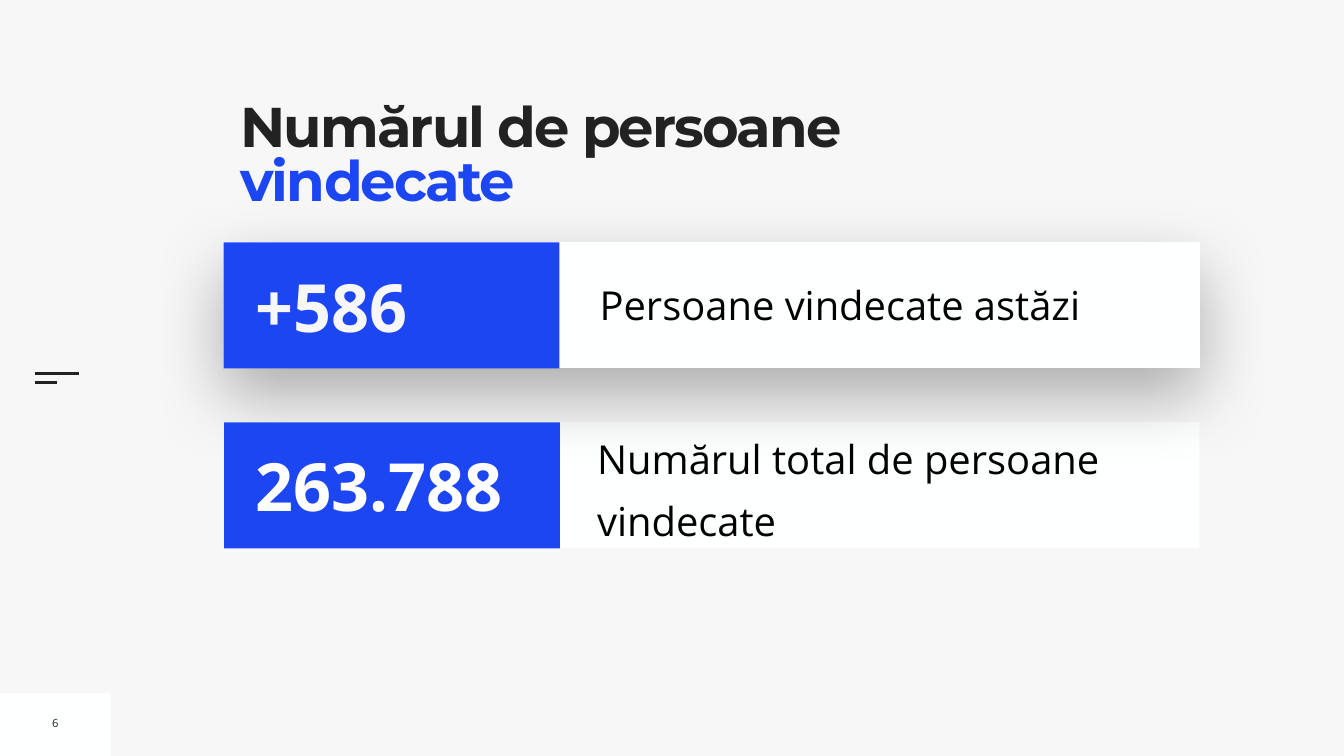
from lxml.etree import SubElement
from pptx import Presentation
from pptx.dml.color import RGBColor
from pptx.enum.shapes import MSO_CONNECTOR, MSO_SHAPE
from pptx.enum.text import MSO_ANCHOR, PP_ALIGN
from pptx.oxml.ns import qn
from pptx.util import Pt

PX = 9144
INK, BLUE, WHITE, PALE = "222222", "1D46F3", "FEFFFF", "F7F7F7"

deck = Presentation()
deck.slide_width, deck.slide_height = 2667 * PX, 1500 * PX
page = deck.slides.add_slide(deck.slide_layouts[6])
page.background.fill.solid()
page.background.fill.fore_color.rgb = RGBColor.from_string(PALE)


def add_panel(left, top, width, height, color):
    panel = page.shapes.add_shape(
        MSO_SHAPE.RECTANGLE, left * PX, top * PX, width * PX, height * PX)
    panel.shadow.inherit = False
    panel.fill.solid()
    panel.fill.fore_color.rgb = RGBColor.from_string(color)
    panel.line.fill.background()
    return panel


def add_text(left, top, width, height, spans, size, font="Open Sans", bold=False,
             inset=10, anchor=MSO_ANCHOR.MIDDLE, align=PP_ALIGN.LEFT,
             line_spacing=1.0, before=0, tracking=0, wrap=True):
    box = page.shapes.add_textbox(left * PX, top * PX, width * PX, height * PX)
    frame = box.text_frame
    frame.word_wrap = wrap
    frame.vertical_anchor = anchor
    frame.margin_left = frame.margin_right = inset * PX
    frame.margin_top = frame.margin_bottom = inset * PX
    para = frame.paragraphs[0]
    para.alignment = align
    para.line_spacing = line_spacing
    para.space_before = Pt(before)
    for text, color in spans:
        span = para.add_run()
        span.text = text
        span.font.name = font
        span.font.size = Pt(size)
        span.font.bold = bold
        span.font.color.rgb = RGBColor.from_string(color)
        if tracking:
            span.font._element.set("spc", str(tracking))


add_panel(0, 1376, 220, 124, WHITE)
for top, right in ((741, 157), (759, 113)):
    rule = page.shapes.add_connector(
        MSO_CONNECTOR.STRAIGHT, 69 * PX, top * PX, right * PX, top * PX)
    rule.line.color.rgb = RGBColor.from_string(INK)
    rule.line.width = Pt(3)
    SubElement(rule._element.spPr, qn("a:effectLst"))

add_text(477, 207, 1301, 273, [("Numărul de persoane ", INK), ("vindecate", BLUE)], 80,
         font="Montserrat", bold=True, inset=0, anchor=MSO_ANCHOR.TOP,
         line_spacing=0.8, tracking=-270)
add_text(93, 1409, 34, 51, [("6", INK)], 16, align=PP_ALIGN.CENTER, wrap=False)

add_panel(445, 837, 1935, 250, WHITE)
add_text(1185, 839, 1195, 236, [("Numărul total de persoane vindecate", "000000")], 57,
         inset=0, line_spacing=1.3, before=20)

today_card = add_panel(444, 480, 1937, 250, WHITE)
effects = today_card._element.spPr.find(qn("a:effectLst"))
shadow = SubElement(effects, qn("a:outerShdw"), blurRad=str(Pt(100)),
                    dist=str(Pt(40)), dir="5400000", algn="ctr", rotWithShape="0")
shade = SubElement(shadow, qn("a:srgbClr"), val="000000")
SubElement(shade, qn("a:alpha"), val="30000")
add_text(1180, 547, 1176, 116, [("Persoane vindecate astăzi", "000000")], 57)

for left, top, figure, color in ((445, 838, "263.788", "FFFFFF"), (444, 481, "+586", PALE)):
    add_panel(left, top, 666, 250, BLUE)
    add_text(left + 53, top + 35, 603, 180, [(figure, color)], 95, bold=True)

deck.save("out.pptx")
